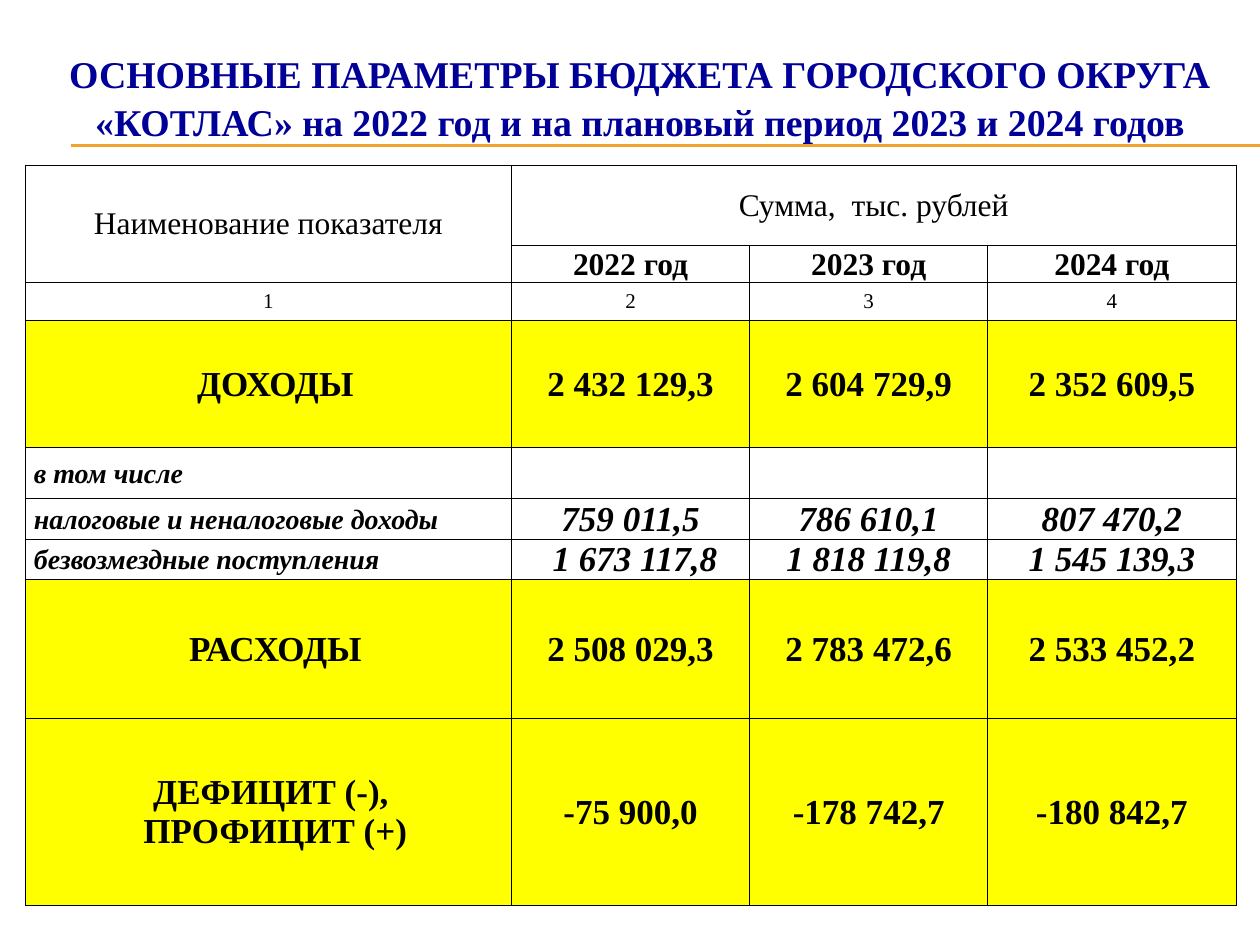
from dataclasses import dataclass

from lxml import etree
from pptx import Presentation
from pptx.dml.color import RGBColor
from pptx.enum.shapes import MSO_CONNECTOR
from pptx.enum.text import MSO_ANCHOR, PP_ALIGN
from pptx.oxml.ns import qn
from pptx.util import Inches, Pt

STRAIGHT = MSO_CONNECTOR.STRAIGHT
MIDDLE = MSO_ANCHOR.MIDDLE
CENTER, LEFT = PP_ALIGN.CENTER, PP_ALIGN.LEFT
FONT = "Times New Roman"
BLACK, NAVY, GOLD, YELLOW = "000000", "000099", "F0A22E", "FFFF00"


@dataclass(frozen=True)
class Style:
    size: float
    bold: bool = False
    italic: bool = False
    align: PP_ALIGN = CENTER
    indent: float = 0.01


@dataclass(frozen=True)
class BudgetRow:
    height: float
    texts: tuple[str, ...]
    label: Style
    value: Style
    fill: str | None = None


HEADING = Style(18)
YEAR = Style(18, bold=True)
NUMBER = Style(12)
TOTAL_LABEL = Style(20, bold=True, indent=0.12)
TOTAL = Style(20, bold=True)
DETAIL_LABEL = Style(16, bold=True, italic=True, align=LEFT, indent=0.07)
DETAIL = Style(20, bold=True, italic=True)

COLUMN_WIDTHS = (3.86, 1.89, 1.89, 1.97)
BUDGET = (
    BudgetRow(0.64, ("Наименование показателя", "Сумма,  тыс. рублей", "", ""), HEADING, HEADING),
    BudgetRow(0.29, ("", "2022 год", "2023 год", "2024 год"), HEADING, YEAR),
    BudgetRow(0.3, ("1", "2", "3", "4"), NUMBER, NUMBER),
    BudgetRow(1.01, ("ДОХОДЫ", "2 432 129,3", "2 604 729,9", "2 352 609,5"),
              TOTAL_LABEL, TOTAL, YELLOW),
    BudgetRow(0.41, ("в том числе", "", "", ""), DETAIL_LABEL, DETAIL),
    BudgetRow(0.32, ("налоговые и неналоговые доходы", "759 011,5", "786 610,1", "807 470,2"),
              DETAIL_LABEL, DETAIL),
    BudgetRow(0.32, ("безвозмездные поступления", " 1 673 117,8", "1 818 119,8", "1 545 139,3"),
              DETAIL_LABEL, DETAIL),
    BudgetRow(1.1, ("РАСХОДЫ", "2 508 029,3", "2 783 472,6", "2 533 452,2"),
              TOTAL_LABEL, TOTAL, YELLOW),
    BudgetRow(1.49, ("ДЕФИЦИТ (-), \nПРОФИЦИТ (+)", "-75 900,0", "-178 742,7", "-180 842,7"),
              TOTAL_LABEL, TOTAL, YELLOW),
)


def color(value: str) -> RGBColor:
    return RGBColor.from_string(value)


def format_paragraph(paragraph, style: Style, ink: str) -> None:
    paragraph.alignment = style.align
    font = paragraph.font
    font.name, font.size = FONT, Pt(style.size)
    font.bold, font.italic = style.bold, style.italic
    font.color.rgb = color(ink)


def add_borders(cell, width: float) -> None:
    properties = cell._tc.get_or_add_tcPr()
    for side in ("lnL", "lnR", "lnT", "lnB"):
        border = etree.SubElement(properties, qn(f"a:{side}"), w=str(Pt(width)))
        solid = etree.SubElement(border, qn("a:solidFill"))
        etree.SubElement(solid, qn("a:srgbClr"), val=BLACK)


def fill_cell(cell, text: str, style: Style, fill: str | None) -> None:
    cell.text = text
    cell.vertical_anchor = MIDDLE
    cell.margin_left = Inches(style.indent)
    cell.margin_right = cell.margin_top = Inches(0.01)
    cell.margin_bottom = 0
    for paragraph in cell.text_frame.paragraphs:
        format_paragraph(paragraph, style, BLACK)
    add_borders(cell, 0.5)
    if fill:
        cell.fill.solid()
        cell.fill.fore_color.rgb = color(fill)
    else:
        cell.fill.background()


def add_rule(slide, y: float) -> None:
    rule = slide.shapes.add_connector(STRAIGHT, Inches(0.56), Inches(y), Inches(10), Inches(y))
    rule.line.color.rgb = color(GOLD)
    rule.line.width = Pt(0.75)
    etree.SubElement(rule._element.spPr, qn("a:effectLst"))


def add_budget(slide) -> None:
    frame = slide.shapes.add_table(
        len(BUDGET), len(COLUMN_WIDTHS), Inches(0.2), Inches(1.31),
        Inches(sum(COLUMN_WIDTHS)), Inches(sum(row.height for row in BUDGET)))
    table = frame.table
    table.first_row = table.horz_banding = False
    for column, width in zip(table.columns, COLUMN_WIDTHS):
        column.width = Inches(width)
    for r, row in enumerate(BUDGET):
        table.rows[r].height = Inches(row.height)
        for c, text in enumerate(row.texts):
            fill_cell(table.cell(r, c), text, row.value if c else row.label, row.fill)
    table.cell(0, 0).merge(table.cell(1, 0))
    table.cell(0, 1).merge(table.cell(0, 3))


def add_title(slide, text: str) -> None:
    title = slide.shapes.title
    title.left, title.top = Inches(0.33), Inches(0.21)
    title.width, title.height = Inches(9.5), Inches(1.1)
    title.text_frame.text = text
    title.text_frame.vertical_anchor = MIDDLE
    heading = title.text_frame.paragraphs[0]
    format_paragraph(heading, Style(21.6, bold=True), NAVY)
    heading.line_spacing = 1.06


def main() -> None:
    deck = Presentation()
    deck.slide_width, deck.slide_height = Inches(10), Inches(7.5)
    slide = deck.slides.add_slide(deck.slide_layouts[5])
    for y in (1.15, 1.16):
        add_rule(slide, y)
    add_budget(slide)
    add_title(slide, "ОСНОВНЫЕ ПАРАМЕТРЫ БЮДЖЕТА ГОРОДСКОГО ОКРУГА «КОТЛАС» "
                     "на 2022 год и на плановый период 2023 и 2024 годов")
    deck.save("out.pptx")


if __name__ == "__main__":
    main()
